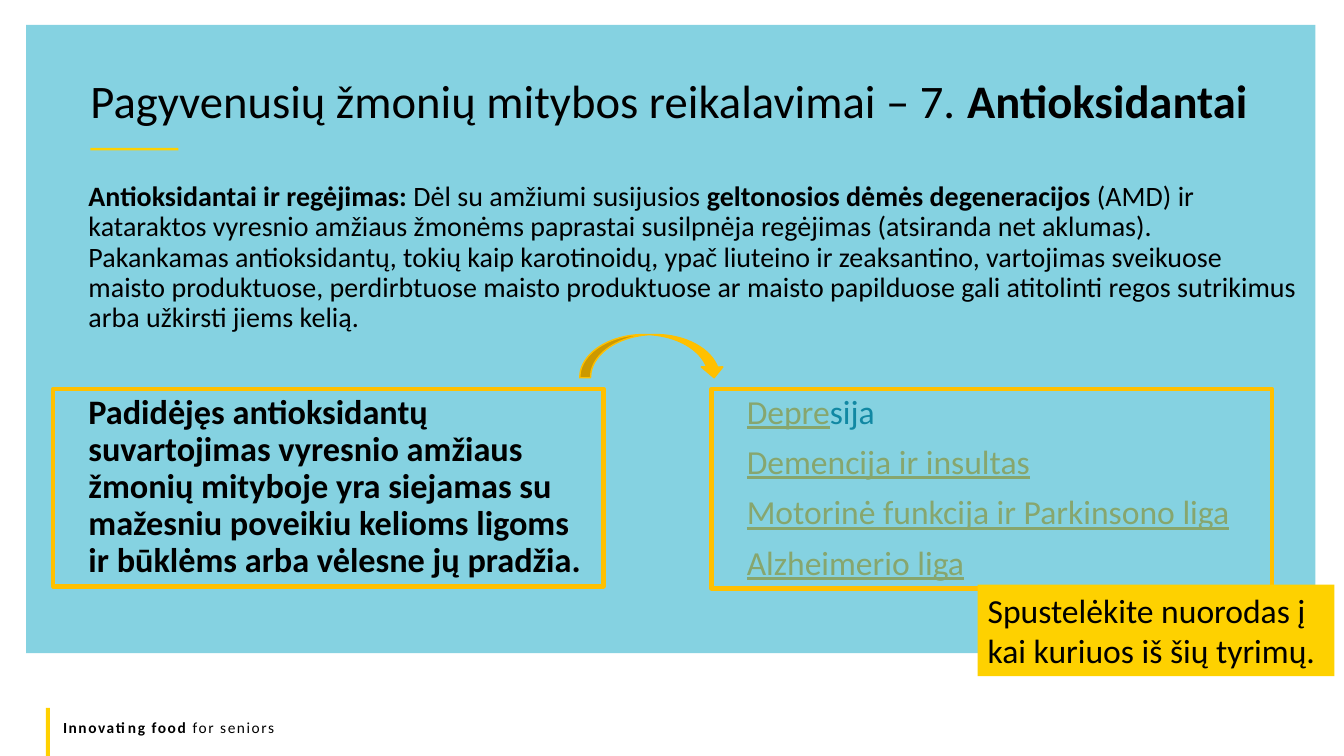
from pptx import Presentation
from pptx.dml.color import RGBColor
from pptx.enum.shapes import MSO_SHAPE as SHAPE
from pptx.enum.text import MSO_ANCHOR as ANCHOR, MSO_AUTO_SIZE as AUTO, PP_ALIGN as ALIGN
from pptx.oxml.xmlchemy import OxmlElement
from pptx.util import Cm, Pt

COLORS = {
    "panel": "85D2E1", "accent": "FFD100", "callout": "FED100",
    "frame": "FFC000", "text": "000000", "link": "87A66E", "teal": "1188A3",
}


class SlideBuilder:
    def __init__(self, prs, font="Calibri"):
        self.font = font
        self.s = prs.slides.add_slide(prs.slide_layouts[1])

    def color(self, name):
        return RGBColor.from_string(COLORS[name])

    def shape(self, box, kind=SHAPE.RECTANGLE, fill=None, line=None, width=1):
        sp = self.s.shapes.add_shape(kind, *map(Cm, box))
        sp.shadow.inherit = False
        if fill:
            sp.fill.solid()
            sp.fill.fore_color.rgb = self.color(fill)
        else:
            sp.fill.background()
        if line:
            sp.line.color.rgb = self.color(line)
            sp.line.width = Pt(width)
        else:
            sp.line.fill.background()
        return sp

    def textbox(self, box):
        return self.s.shapes.add_textbox(*map(Cm, box))

    def placeholder(self, idx, box):
        """Place a template placeholder in front of everything drawn so far."""
        sp = self.s.placeholders[idx]
        sp.left, sp.top, sp.width, sp.height = map(Cm, box)
        self.s.shapes.element.append(sp.element)
        return sp

    def add_text(self, sp, paragraphs, size, anchor=ANCHOR.MIDDLE, indent=0,
                 line=None, gap=0, spacing=0):
        """Fill a shape with paragraphs, each a list of (text, font format) runs."""
        tf = sp.text_frame
        frame = {"word_wrap": True, "auto_size": AUTO.NONE, "vertical_anchor": anchor,
                 "margin_left": Cm(0.25), "margin_right": Cm(0.25),
                 "margin_top": Cm(0.13), "margin_bottom": Cm(0.13)}
        for name, value in frame.items():
            setattr(tf, name, value)
        for i, runs in enumerate(paragraphs):
            p = tf.add_paragraph() if i else tf.paragraphs[0]
            pPr = p._p.get_or_add_pPr()
            pPr.set("marL", str(Cm(indent)))
            pPr.set("indent", "0")
            pPr.append(OxmlElement("a:buNone"))
            layout = {"alignment": ALIGN.LEFT, "line_spacing": line,
                      "space_before": Pt(gap if i else 0)}
            for name, value in layout.items():
                setattr(p, name, value)
            for text, extra in runs:
                r = p.add_run()
                r.text = text
                style = {"name": self.font, "size": Pt(size), "bold": False, **extra}
                r.font.color.rgb = self.color(style.pop("color", "text"))
                for name, value in style.items():
                    setattr(r.font, name, value)
                if spacing:
                    r._r.get_or_add_rPr().set("spc", str(round(spacing * 100)))


def main():
    prs = Presentation()
    prs.slide_width, prs.slide_height = Cm(33.87), Cm(19.05)
    b = SlideBuilder(prs)
    bold = {"bold": True}
    link = {"color": "link", "underline": True}
    listing = {"indent": 0.64, "line": 0.9, "gap": 10}

    b.shape((0.66, 0.63, 32.49, 15.83), fill="panel")
    b.shape((2.28, 3.73, 2.22, 0.06), fill="accent")
    b.shape((1.16, 17.84, 0.1, 1.21), fill="accent")
    b.add_text(b.textbox((1.34, 17.95, 30.48, 0.74)),
               [[("Innovating food ", bold), ("for seniors", {})]], 11, spacing=1.1)

    b.add_text(b.placeholder(1, (1.34, 4.47, 31.6, 11.99)), [[
        ("Antioksidantai ir regėjimas: ", bold),
        ("Dėl su amžiumi susijusios ", {}),
        ("geltonosios dėmės degeneracijos ", bold),
        ("(AMD) ir kataraktos vyresnio amžiaus žmonėms paprastai susilpnėja regėjimas "
         "(atsiranda net aklumas). Pakankamas antioksidantų, tokių kaip karotinoidų, "
         "ypač liuteino ir zeaksantino, vartojimas sveikuose maisto produktuose, "
         "perdirbtuose maisto produktuose ar maisto papilduose gali atitolinti regos "
         "sutrikimus arba užkirsti jiems kelią.", {}),
    ]], 20, anchor=ANCHOR.TOP, **listing)
    b.add_text(b.placeholder(0, (2.03, 1.78, 30.02, 1.63)), [[
        ("Pagyvenusių žmonių mitybos reikalavimai – 7. ", {}), ("Antioksidantai", bold),
    ]], 33.3, line=0.9)

    diseases = b.shape((17.93, 9.8, 14.12, 5.03), line="frame", width=3)
    b.add_text(diseases, [
        [("Depre", link), ("sija", {"color": "teal"})],
        [("Demencija ir insultas", link)],
        [("Motorinė funkcija ir Parkinsono liga", link)],
        [("Alzheimerio liga", link)],
    ], 24, **listing)
    effect = b.shape((1.34, 9.8, 13.87, 4.98), line="frame", width=3)
    b.add_text(effect, [[
        ("Padidėjęs antioksidantų suvartojimas vyresnio amžiaus žmonių mityboje yra "
         "siejamas su mažesniu poveikiu kelioms ligoms ir būklėms arba vėlesne jų "
         "pradžia.", bold),
    ]], 24.5, **listing)
    b.shape((14.61, 8.43, 3.66, 1.09), SHAPE.CURVED_DOWN_ARROW, "frame", "frame")
    callout = b.shape((24.64, 14.73, 8.99, 2.31), fill="callout")
    b.add_text(callout, [[("Spustelėkite nuorodas į kai kuriuos iš šių tyrimų.", {})]], 24)

    prs.save("out.pptx")


if __name__ == "__main__":
    main()
